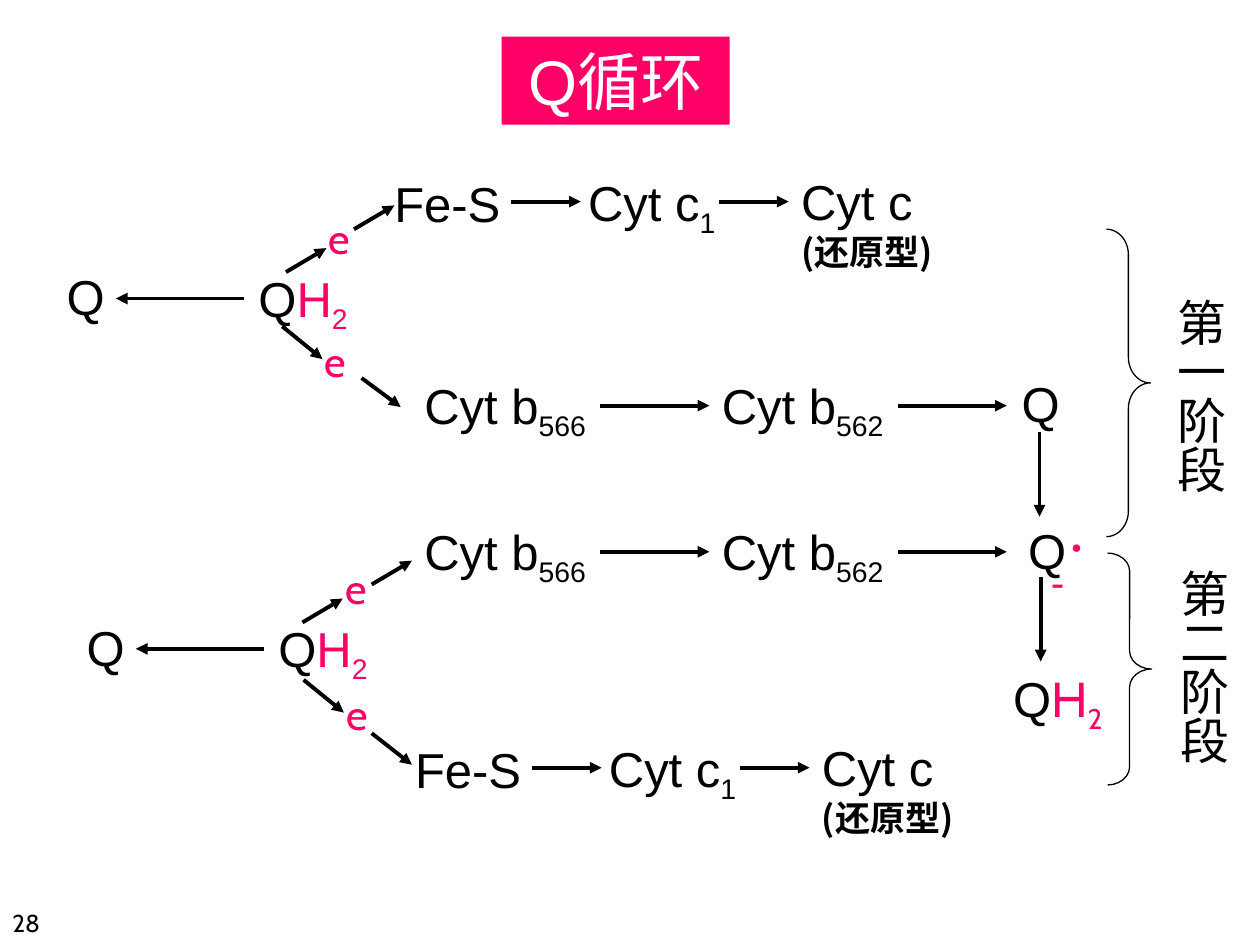
from dataclasses import dataclass

from lxml.etree import SubElement
from pptx import Presentation
from pptx.dml.color import RGBColor
from pptx.enum.shapes import MSO_CONNECTOR, MSO_SHAPE
from pptx.enum.text import MSO_ANCHOR, MSO_AUTO_SIZE, PP_ALIGN
from pptx.oxml.ns import qn
from pptx.util import Pt

COLORS = {"ink": "000000", "accent": "FF0066", "paper": "FFFFFF"}
CJK = "Noto Sans CJK SC"
SUBSCRIPT, SUPERSCRIPT = -25, 30


@dataclass(frozen=True)
class Piece:
    """A stretch of text with one format."""
    text: str
    size: float = 28
    font: str = "Arial"
    color: str = "ink"
    bold: bool = False
    baseline: int = 0


@dataclass(frozen=True)
class Label:
    pieces: tuple[Piece, ...]
    left: float
    top: float
    width: float
    height: float = 41
    centered: bool = False
    wrap: bool = True
    spacing: float = 1.0


@dataclass(frozen=True)
class Arrow:
    x1: float
    y1: float
    x2: float
    y2: float


@dataclass(frozen=True)
class Stage:
    name: str
    brace: tuple[float, float, float, float]
    curve: float
    name_left: float
    name_top: float


def with_subscript(base: str, index: str) -> tuple[Piece, ...]:
    return Piece(base), Piece(index, baseline=SUBSCRIPT)


def reduced_quinone(font: str) -> tuple[Piece, ...]:
    return (Piece("Q"), Piece("H", font=font, color="accent"),
            Piece("2", font=font, color="accent", baseline=SUBSCRIPT))


QUINONE = (Piece("Q"),)
ELECTRON = (Piece("e", 24, "Cabin", "accent"),)
REDUCED_CYT_C = (Piece("Cyt c "), Piece("(还原型)", 20, CJK, bold=True))
SEMIQUINONE = (Piece("Q"), Piece("·", 36, "Times New Roman", "accent"),
               Piece("-", 40, color="accent", baseline=SUPERSCRIPT))

# Shifts of each repeated part, one per stage
IRON_SULFUR_SHIFTS = [(0, 0), (11.9, 323.5)]
CYT_B_SHIFTS = [(0, 0), (0, 83.5)]
DONOR_SHIFTS = [(0, 0), (11.4, 200.2)]

IRON_SULFUR_CHAIN = [
    Label((Piece("Fe-S"),), 218.2, 95.8, 79),
    Arrow(292.3, 115.2, 331.9, 115.2),
    Label(with_subscript("Cyt c", "1"), 329, 95, 96.5),
    Arrow(411.1, 115.2, 450.7, 115.2),
    Label(REDUCED_CYT_C, 450.7, 94.3, 96.5, 65),
]
CYT_B_CHAIN = [
    Label(with_subscript("Cyt b", "566"), 235.4, 211, 118.8),
    Arrow(342.7, 231.8, 405.4, 231.8),
    Label(with_subscript("Cyt b", "562"), 405.4, 211, 130.3),
    Arrow(513.4, 231.8, 575.3, 231.8),
]
DONOR = [
    Label(reduced_quinone("Arial"), 139.7, 149.8, 67, centered=True, wrap=False),
    Arrow(139.7, 170.6, 66.2, 170.6),
    Label(QUINONE, 31, 149, 39.6),
]
ELECTRON_UP = [Label(ELECTRON, 180.7, 118, 39.6, 36),
               Arrow(163.4, 155.5, 186.5, 141.8)]
ELECTRON_DOWN = [Label(ELECTRON, 178.6, 187.9, 39.6, 36),
                 Arrow(161.3, 186.5, 184.3, 205.2)]
ELECTRON_ARRIVALS = [
    Arrow(202.3, 131, 225.4, 117.4), Arrow(206.6, 216, 229, 232.6),
    Arrow(212.4, 334, 235.4, 320.4), Arrow(212.4, 419, 235.4, 437),
]
QUINONE_REDUCTION = [
    Label(QUINONE, 576.7, 210.2, 39.6),
    Arrow(594, 247, 594, 295.2),
    Label(SEMIQUINONE, 578.4, 301, 52, 33, centered=True, spacing=0.6),
    Arrow(594.7, 329.8, 594.7, 378),
    Label(reduced_quinone("Cabin"), 571.7, 388, 65.5, 27.4,
          centered=True, wrap=False, spacing=0.6),
]
PARTS = [
    (IRON_SULFUR_CHAIN, IRON_SULFUR_SHIFTS),
    (CYT_B_CHAIN, CYT_B_SHIFTS),
    (DONOR, DONOR_SHIFTS),
    (ELECTRON_UP, [(0, 0), (9.4, 200.2)]),
    (ELECTRON_DOWN, [(0, 0), (12.2, 202)]),
    (ELECTRON_ARRIVALS, [(0, 0)]),
    (QUINONE_REDUCTION, [(0, 0)]),
]
STAGES = [
    Stage("第一阶段", (632.2, 131, 25.2, 175.7), 0.58, 658.1, 163.4),
    Stage("第二阶段", (632.9, 316.1, 25.2, 132.5), 0.41, 659.5, 318.2),
]


def rgb(name: str) -> RGBColor:
    return RGBColor.from_string(COLORS[name])


def write(paragraph, pieces: tuple[Piece, ...]) -> None:
    for piece in pieces:
        run = paragraph.add_run()
        run.text = piece.text
        run.font.size = Pt(piece.size)
        run.font.name = piece.font
        run.font.bold = piece.bold
        run.font.color.rgb = rgb(piece.color)
        properties = run._r.get_or_add_rPr()
        SubElement(properties, qn("a:ea")).set("typeface", CJK)
        if piece.baseline:
            properties.set("baseline", str(piece.baseline * 1000))


def draw_label(slide, label: Label, dx: float = 0, dy: float = 0):
    box = slide.shapes.add_textbox(Pt(label.left + dx), Pt(label.top + dy),
                                   Pt(label.width), Pt(label.height))
    box.text_frame.word_wrap = label.wrap
    paragraph = box.text_frame.paragraphs[0]
    paragraph.alignment = PP_ALIGN.CENTER if label.centered else PP_ALIGN.LEFT
    paragraph.line_spacing = label.spacing
    write(paragraph, label.pieces)
    return box


def draw_arrow(slide, arrow: Arrow, dx: float, dy: float) -> None:
    connector = slide.shapes.add_connector(
        MSO_CONNECTOR.STRAIGHT, Pt(arrow.x1 + dx), Pt(arrow.y1 + dy),
        Pt(arrow.x2 + dx), Pt(arrow.y2 + dy))
    connector.line.color.rgb = rgb("ink")
    connector.line.width = Pt(2.25)
    SubElement(connector.line._get_or_add_ln(), qn("a:tailEnd")).set("type", "triangle")
    SubElement(connector._element.spPr, qn("a:effectLst"))


def draw_stage(slide, stage: Stage) -> None:
    brace = slide.shapes.add_shape(MSO_SHAPE.RIGHT_BRACE, *map(Pt, stage.brace))
    brace.adjustments[0] = stage.curve
    brace.shadow.inherit = False
    brace.fill.background()
    brace.line.color.rgb = rgb("ink")
    brace.line.width = Pt(0.75)
    name = draw_label(slide, Label((Piece(stage.name, font="Cabin"),),
                                   stage.name_left, stage.name_top, 48.2, 141.8))
    name.text_frame._txBody.bodyPr.set("vert", "eaVert")


def draw_title(slide) -> None:
    title = slide.shapes.title
    title.left, title.top, title.width, title.height = map(Pt, (286.6, 20.9, 130.3, 50.4))
    title.fill.solid()
    title.fill.fore_color.rgb = rgb("accent")
    title.text_frame.auto_size = MSO_AUTO_SIZE.NONE
    paragraph = title.text_frame.paragraphs[0]
    paragraph.alignment = PP_ALIGN.CENTER
    write(paragraph, (Piece("Q", 36, color="paper"), Piece("循环", 36, CJK, "paper")))


def main() -> None:
    presentation = Presentation()
    presentation.slide_width, presentation.slide_height = Pt(720), Pt(540)
    slide = presentation.slides.add_slide(presentation.slide_layouts[5])
    draw_title(slide)
    for elements, shifts in PARTS:
        for dx, dy in shifts:
            for element in elements:
                draw = draw_label if isinstance(element, Label) else draw_arrow
                draw(slide, element, dx, dy)
    for stage in STAGES:
        draw_stage(slide, stage)
    page_number = draw_label(slide, Label((Piece("28", 14, "Cabin"),), 0, 503.3, 45.4, 36))
    page_number.text_frame.vertical_anchor = MSO_ANCHOR.BOTTOM
    presentation.save("out.pptx")


if __name__ == "__main__":
    main()
